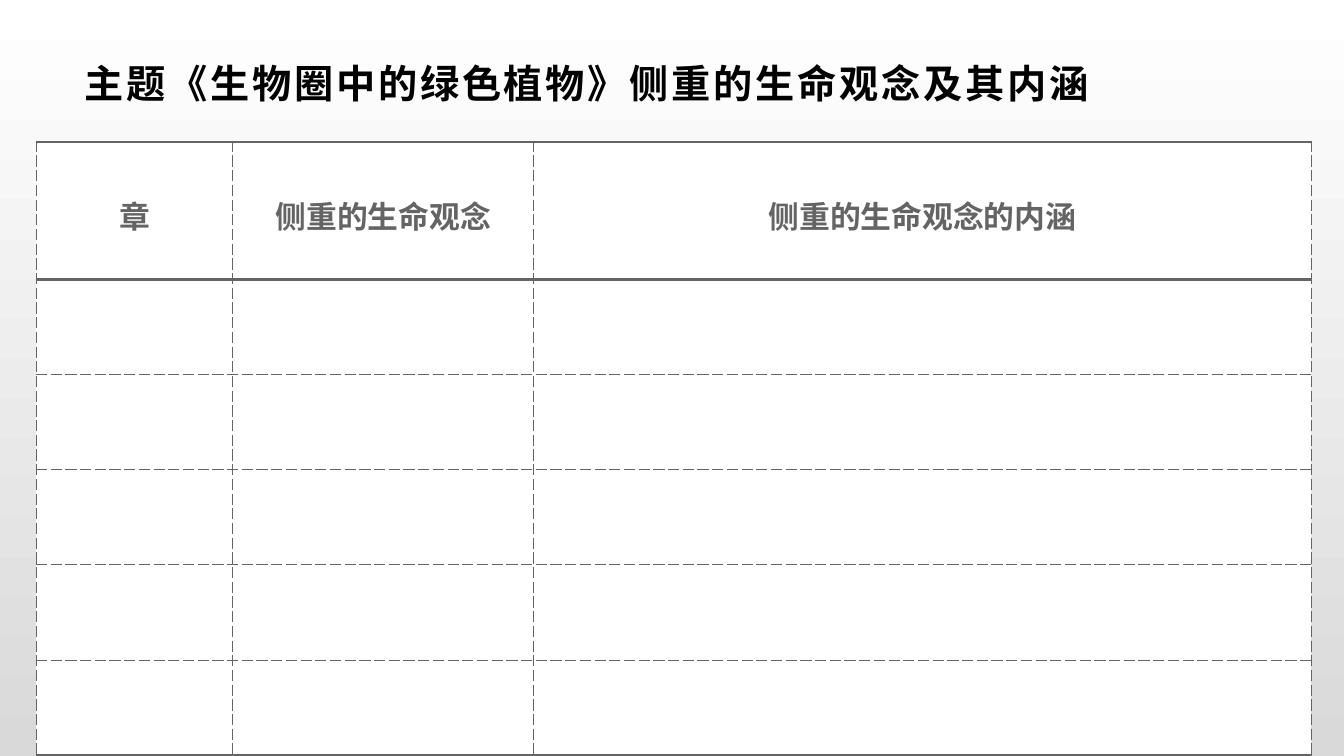
from lxml import etree
from pptx import Presentation
from pptx.dml.color import RGBColor
from pptx.enum.text import MSO_ANCHOR, PP_ALIGN
from pptx.oxml.ns import qn
from pptx.util import Pt

MIDDLE = MSO_ANCHOR.MIDDLE
LEFT, CENTER = PP_ALIGN.LEFT, PP_ALIGN.CENTER
COLORS = {"title": "000000", "grey": "646464", "cell": "FFFFFF",
          "sky": "FFFFFF", "ground": "D9D9D9"}
FONTS = {"title": "Arial", "east": "Noto Sans CJK SC"}
THIN, THICK = 0.75, 2.25
HEADINGS = ["章", "侧重的生命观念", "侧重的生命观念的内涵"]
COLUMN_WIDTHS = [140.4, 214.6, 555.8]
ROW_HEIGHTS = [98] + [68] * 5


class ThemeSlide:
    """Holds the style and the slide being built."""

    def __init__(self, deck):
        self.slide = deck.slides.add_slide(deck.slide_layouts[5])

    def background(self):
        fill = self.slide.background.fill
        fill.gradient()
        fill.gradient_angle = 270
        for stop, name, position in zip(fill.gradient_stops, ("sky", "ground"), (0, 1)):
            stop.color.rgb = RGBColor.from_string(COLORS[name])
            stop.position = position

    def set_text(self, paragraph, text, size, font_name, color, align):
        paragraph.text = text
        paragraph.alignment = align
        font = paragraph.font
        font.size, font.bold, font.name = Pt(size), True, font_name
        font.color.rgb = RGBColor.from_string(COLORS[color])
        properties = paragraph._p.pPr.find(qn("a:defRPr"))
        etree.SubElement(properties, qn("a:ea"), typeface=FONTS["east"])
        return properties

    def title(self, text, left, top, width, height):
        box = self.slide.shapes.title
        box.left, box.top, box.width, box.height = map(Pt, (left, top, width, height))
        frame = box.text_frame
        frame.word_wrap = True
        frame.vertical_anchor = MIDDLE
        frame.margin_left, frame.margin_right = Pt(8), Pt(6)
        frame.margin_top = frame.margin_bottom = Pt(3)
        properties = self.set_text(
            frame.paragraphs[0], text, 28, FONTS["title"], "title", LEFT)
        properties.set("spc", "200")

    def border(self, cell, side, weight):
        line = etree.SubElement(cell._tc.get_or_add_tcPr(), qn("a:ln" + side),
                                w=str(Pt(weight)))
        fill = etree.SubElement(line, qn("a:solidFill"))
        etree.SubElement(fill, qn("a:srgbClr"), val=COLORS["grey"])
        etree.SubElement(line, qn("a:prstDash"), val="dash" if weight == THIN else "solid")

    def table(self, left, top, widths, heights, headings):
        frame = self.slide.shapes.add_table(
            len(heights), len(widths), Pt(left), Pt(top), Pt(sum(widths)), Pt(sum(heights)))
        table = frame.table
        table.horz_banding = False
        for column, width in zip(table.columns, widths):
            column.width = Pt(width)
        last = len(heights) - 1
        for index, (row, height) in enumerate(zip(table.rows, heights)):
            row.height = Pt(height)
            weights = {"L": THIN, "R": THIN,
                       "T": THICK if index < 2 else THIN,
                       "B": THICK if index in (0, last) else THIN}
            for cell in row.cells:
                for side, weight in weights.items():
                    self.border(cell, side, weight)
                cell.fill.solid()
                cell.fill.fore_color.rgb = RGBColor.from_string(COLORS["cell"])
        for cell, heading in zip(table.rows[0].cells, headings):
            cell.vertical_anchor = MIDDLE
            cell.margin_left = cell.margin_right = Pt(25)
            cell.margin_top = cell.margin_bottom = Pt(17)
            paragraph = cell.text_frame.paragraphs[0]
            paragraph.line_spacing = 1.2
            self.set_text(paragraph, heading, 22, FONTS["east"], "grey", CENTER)


def main():
    deck = Presentation()
    deck.slide_width, deck.slide_height = Pt(960), Pt(540)
    page = ThemeSlide(deck)
    page.background()
    page.title("主题《生物圈中的绿色植物》侧重的生命观念及其内涵", 52.5, 34, 855, 51)
    page.table(26, 101.5, COLUMN_WIDTHS, ROW_HEIGHTS, HEADINGS)
    deck.save("out.pptx")


if __name__ == "__main__":
    main()
